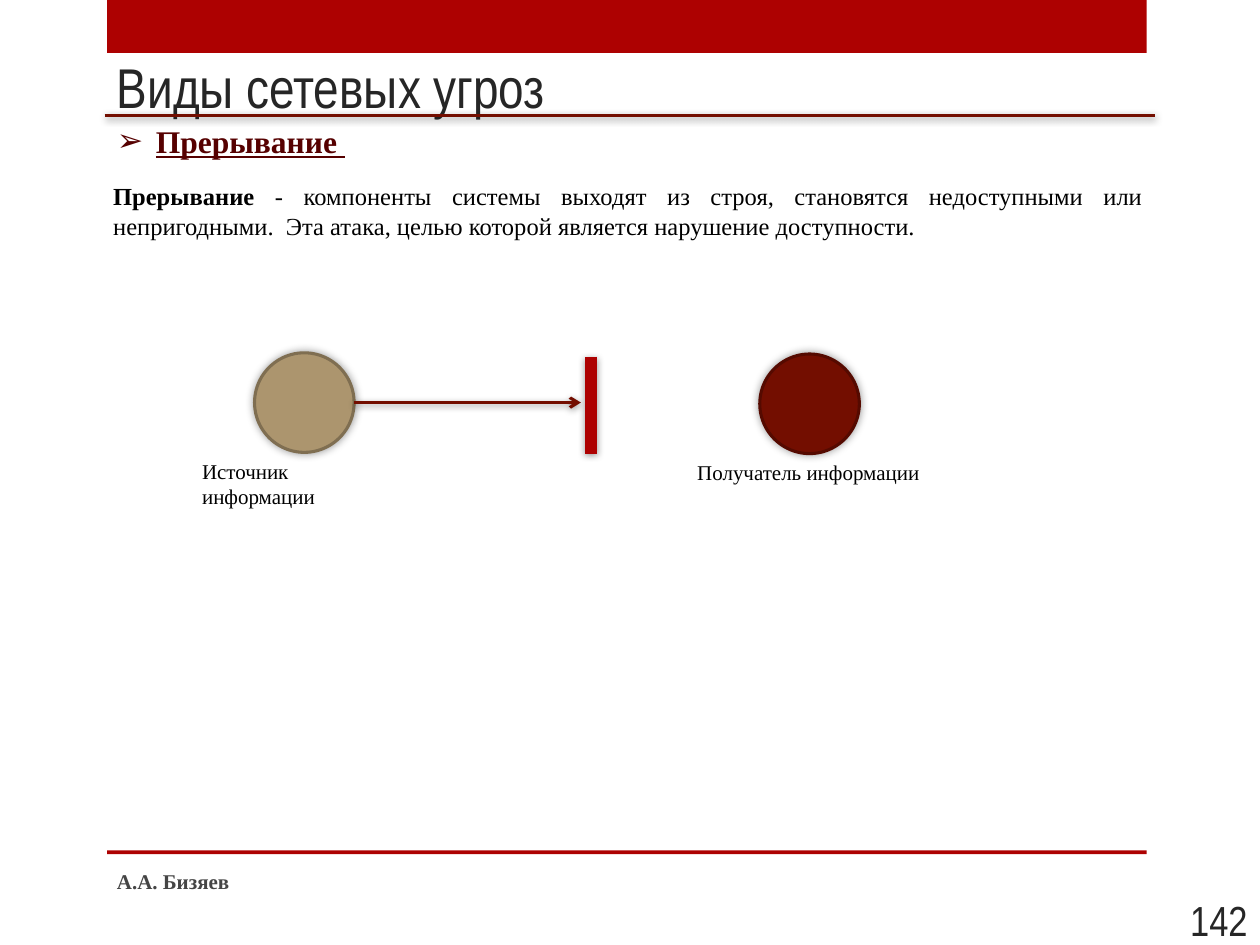
from lxml import etree
from pptx import Presentation
from pptx.dml.color import RGBColor
from pptx.enum.shapes import MSO_CONNECTOR, MSO_SHAPE
from pptx.enum.text import MSO_ANCHOR as ANCHOR, MSO_AUTO_SIZE, PP_ALIGN as ALIGN
from pptx.oxml import parse_xml
from pptx.oxml.ns import nsdecls, qn
from pptx.util import Inches, Pt

RED = RGBColor(0xAD, 0x01, 0x01)
DARK_RED = RGBColor(0x73, 0x0E, 0x00)
DEEP_RED = RGBColor(0x55, 0x0A, 0x00)
HEADING = RGBColor(0x56, 0x00, 0x00)
TAN = RGBColor(0xAC, 0x95, 0x6E)
TAN_EDGE = RGBColor(0x7F, 0x6E, 0x51)
INK = RGBColor(0x26, 0x26, 0x26)
GREY = RGBColor(0x45, 0x45, 0x45)
BLACK = RGBColor(0, 0, 0)
SANS, SERIF = "Arial Narrow", "Times New Roman"


def add_shadow(sp, blur, dist=0, angle=0):
    """Soft black shadow; blur and dist in points, angle in degrees."""
    sp._element.spPr.append(parse_xml(
        f'<a:effectLst {nsdecls("a")}><a:outerShdw blurRad="{Pt(blur)}" '
        f'dist="{Pt(dist)}" dir="{angle * 60000}" rotWithShape="0">'
        '<a:srgbClr val="000000"><a:alpha val="40000"/></a:srgbClr>'
        '</a:outerShdw></a:effectLst>'))


def add_text(s, box, *runs, size, color, font=SERIF, align=ALIGN.LEFT,
             anchor=ANCHOR.TOP, wrap=True, grow=False, underline=None):
    """Each run is a (text, bold) pair; returns the paragraph."""
    tf = s.shapes.add_textbox(*map(Inches, box)).text_frame
    tf.word_wrap, tf.vertical_anchor = wrap, anchor
    if grow:
        tf.auto_size = MSO_AUTO_SIZE.SHAPE_TO_FIT_TEXT
    p = tf.paragraphs[0]
    p.alignment = align
    for text, bold in runs:
        r = p.add_run()
        r.text = text
        f = r.font
        f.name, f.size, f.bold, f.underline = font, Pt(size), bold, underline
        f.color.rgb = color
    return p


def add_bullet(p, char, indent):
    pPr = p._p.get_or_add_pPr()
    pPr.set("marL", str(Inches(indent)))
    pPr.set("indent", str(-Inches(indent)))
    etree.SubElement(pPr, qn("a:buFont")).set("typeface", "Wingdings")
    pPr[-1].set("typeface", "Arial")
    etree.SubElement(pPr, qn("a:buChar")).set("char", char)


def add_solid(s, kind, box, fill, edge=None):
    sp = s.shapes.add_shape(kind, *map(Inches, box))
    sp.shadow.inherit = False
    sp.fill.solid()
    sp.fill.fore_color.rgb = fill
    if edge is None:
        sp.line.fill.background()
    else:
        sp.line.color.rgb = edge
        sp.line.width = Pt(1.75)
    return sp


def add_line(s, start, end, color=DARK_RED, width=1.75, arrow=False):
    ln = s.shapes.add_connector(MSO_CONNECTOR.STRAIGHT,
                                *map(Inches, (*start, *end)))
    ln.line.color.rgb = color
    ln.line.width = Pt(width)
    if arrow:
        etree.SubElement(ln.line._get_or_add_ln(),
                         qn("a:tailEnd")).set("type", "arrow")
    add_shadow(ln, 4, 1, 88)


def add_frame(s, left, top, width, height):
    """Red bands, author and page number around the content."""
    add_solid(s, MSO_SHAPE.RECTANGLE, (left, top, width, 0.42), RED)
    add_solid(s, MSO_SHAPE.RECTANGLE, (left, top + 6.75, width, 0.03), RED)
    add_text(s, (left - 0.02, top + 6.79, 5.33, 0.4), ("А.А. Бизяев", True),
             size=12, color=GREY, anchor=ANCHOR.MIDDLE)
    add_text(s, (9.17, top + height - 0.4, 0.83, 0.4), ("142", False), size=24,
             color=INK, font=SANS, align=ALIGN.RIGHT, anchor=ANCHOR.MIDDLE)


def add_heading(s, left, top, width):
    """Title, rule and bulleted subheading."""
    rule_y = top + 0.63
    add_text(s, (left, top, 8.66, 0.71), ("Виды сетевых угроз", False),
             size=32, color=INK, font=SANS, anchor=ANCHOR.BOTTOM)
    add_line(s, (left, rule_y), (left + width, rule_y))
    p = add_text(s, (left, rule_y, 2.03, 0.4), ("Прерывание ", True), size=18,
                 color=HEADING, wrap=False, grow=True, underline=True)
    add_bullet(p, "➢", 0.31)


def add_definition(s, left, top, width, height):
    add_text(s, (left, top, width, height), ("Прерывание", True),
             (" - компоненты системы выходят из строя, становятся недоступными "
              "или непригодными.  Эта атака, целью которой является нарушение "
              "доступности. ", False),
             size=14, color=BLACK, align=ALIGN.JUSTIFY, grow=True)


def add_node(s, left, top, size, label, label_width, fill, edge):
    """Circle with a caption centred below it."""
    sp = add_solid(s, MSO_SHAPE.OVAL, (left, top, size, size), fill, edge)
    sp._element.spPr.remove(sp._element.spPr.find(qn("a:effectLst")))
    add_shadow(sp, 5)
    label_left = left + (size - label_width) / 2
    add_text(s, (label_left, top + size, label_width, 0.3), (label, False),
             size=12, color=BLACK, wrap=False, grow=True)


def add_diagram(s, left, top):
    """Flow from the source, stopped by a barrier before the receiver."""
    size = 0.79
    mid = top + size / 2
    add_node(s, left, top, size, "Источник информации", 1.82, TAN, TAN_EDGE)
    add_node(s, left + 4.01, top + 0.01, size, "Получатель информации", 1.98,
             DARK_RED, DEEP_RED)
    add_line(s, (left + size, mid), (left + 2.59, mid), arrow=True)
    add_line(s, (left + 2.67, top + 0.03), (left + 2.67, top + 0.8), RED, 7)


def main():
    prs = Presentation()
    prs.slide_width, prs.slide_height = Inches(10), Inches(7.5)
    s = prs.slides.add_slide(prs.slide_layouts[6])
    add_frame(s, 0.85, 0, 8.25, 7.5)
    add_heading(s, 0.83, 0.29, 8.34)
    add_diagram(s, 2.02, 2.8)
    add_definition(s, 0.8, 1.39, 8.37, 0.57)
    prs.save("out.pptx")


if __name__ == "__main__":
    main()
